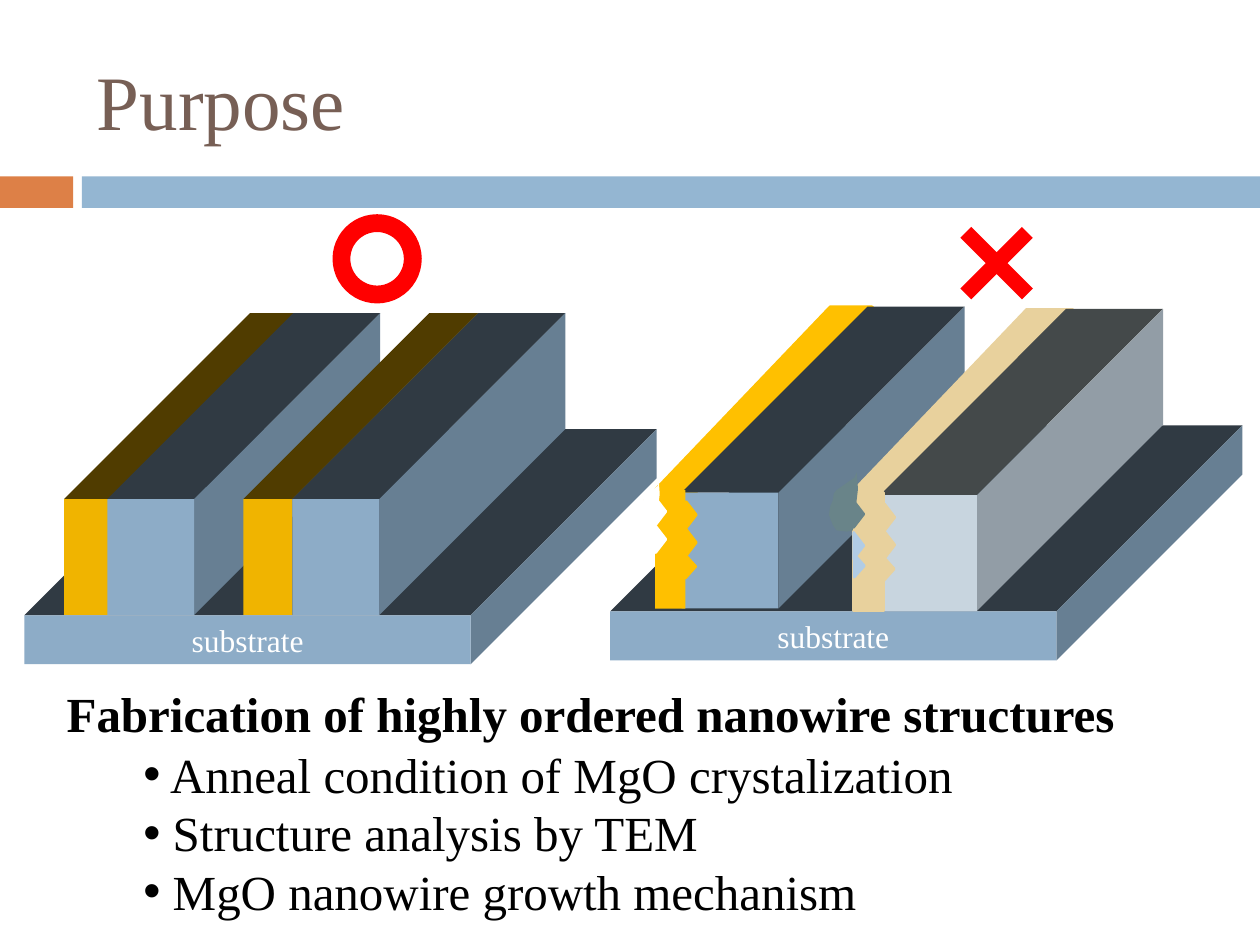
from typing import NamedTuple, Optional

from lxml import etree
from pptx import Presentation
from pptx.dml.color import RGBColor
from pptx.enum import shapes as sh, text as tx
from pptx.oxml import ns
from pptx.util import Pt

FONT = "Times New Roman"
WHITE = RGBColor(0xFF, 0xFF, 0xFF)
BLACK = RGBColor(0, 0, 0)
RED = RGBColor(0xFF, 0, 0)
BROWN = RGBColor(0x77, 0x5F, 0x55)
RUST = RGBColor(0xDD, 0x80, 0x47)
SKY = RGBColor(0x94, 0xB6, 0xD2)
PALE = RGBColor(0xB1, 0xCC, 0xE5)
MOSS = RGBColor(0x69, 0x84, 0x89)
GOLD = RGBColor(0xFF, 0xC0, 0x00)
SAND = RGBColor(0xE8, 0xD1, 0x9D)
DEPTH = 106.3
KIND = sh.MSO_SHAPE


class Box(NamedTuple):
    x: float
    y: float
    w: float
    h: float

    def move(self, dx: float, dy: float) -> "Box":
        return Box(self.x + dx, self.y + dy, self.w, self.h)


class Tone(NamedTuple):
    front: RGBColor
    top: RGBColor
    side: Optional[RGBColor]


class Spike(NamedTuple):
    x: float
    y: float
    size: float
    color: RGBColor


class Wire(NamedTuple):
    dx: float
    dy: float
    film: RGBColor
    edge: Optional[RGBColor]
    tone: Tone
    nicks: tuple


STEEL = Tone(RGBColor(0x8D, 0xAC, 0xC7), RGBColor(0x30, 0x3A, 0x43),
             RGBColor(0x67, 0x7F, 0x93))
FADED = Tone(RGBColor(0xC8, 0xD5, 0xDF), RGBColor(0x44, 0x49, 0x4A),
             RGBColor(0x92, 0x9D, 0xA6))
AMBER = Tone(RGBColor(0xF0, 0xB4, 0x00), RGBColor(0x50, 0x3C, 0x00), None)

BASES = [Box(14, 351.6, 255, 28), Box(348.7, 349.4, 255, 28)]
BARS = [
    (Box(36.7, 285.2, 28, 66.2), AMBER),
    (Box(61.3, 285.2, 49.7, 66.2), STEEL),
    (Box(139, 285.2, 28.1, 66.2), AMBER),
    (Box(167.1, 285.2, 49.7, 66.2), STEEL),
]
TEETH = [(391.3, 309.6, 15.1), (391, 323.3, 13), (391.3, 293.8, 15.1)]
WIRES = [
    Wire(0, 0, GOLD, None, STEEL, (
        Spike(377.6, 308.2, 15.1, WHITE), Spike(377.6, 292.3, 15.1, WHITE))),
    Wire(113.4, 1.4, SAND, SAND, FADED, (
        Spike(490.7, 311.8, 15.1, PALE), Spike(491, 323.3, 13, PALE),
        Spike(490.7, 293.8, 15.1, MOSS))),
]
BLOB = [(.96, 0), (1, .28), (.95, .5), (.88, .68), (.83, .98), (.63, 1),
        (.29, .98), (.17, .89), (.04, .72), (.08, .58), (.17, .47),
        (.2, .36), (.29, .3), (.71, .15), (.88, .09)]
BLOBS = [(Box(365.8, 275.8, 11.2, 23), WHITE),
         (Box(473, 270, 17.3, 33.8), MOSS)]
GOALS = ["Anneal condition of MgO crystalization",
         "Structure analysis by TEM",
         "MgO nanowire growth mechanism"]


def paint(item, fill: RGBColor, edge: Optional[RGBColor] = None) -> None:
    item.shadow.inherit = False
    item.fill.solid()
    item.fill.fore_color.rgb = fill
    if edge is None:
        item.line.fill.background()
    else:
        item.line.color.rgb = edge
        item.line.width = Pt(1.5)


def shape(slide, kind, box: Box, fill: RGBColor,
          edge: Optional[RGBColor] = None, turn: float = 0):
    item = slide.shapes.add_shape(kind, *map(Pt, box))
    item.rotation = turn
    paint(item, fill, edge)
    return item


def shell(slide, dots: list, fill: RGBColor) -> None:
    dots = [(Pt(x), Pt(y)) for x, y in dots]
    pen = slide.shapes.build_freeform(*dots[0])
    pen.add_line_segments(dots[1:], close=True)
    paint(pen.convert_to_shape(), fill)


def prism(slide, box: Box, tone: Tone):
    x, y, w, h = box
    far, up = x + w, y - DEPTH
    shell(slide, [(x, y), (x + DEPTH, up), (far + DEPTH, up), (far, y)],
          tone.top)
    if tone.side is not None:
        shell(slide, [(far, y), (far + DEPTH, up), (far + DEPTH, up + h),
                      (far, y + h)], tone.side)
    return shape(slide, KIND.RECTANGLE, box, tone.front)


def spike(slide, tip: Spike) -> None:
    box = Box(tip.x - tip.size / 2, tip.y - 2.9, tip.size, 5.8)
    shape(slide, KIND.ISOSCELES_TRIANGLE, box, tip.color, tip.color, 90)


def rough(slide, wire: Wire) -> None:
    dx, dy = wire.dx, wire.dy
    shape(slide, KIND.RECTANGLE, Box(424.1, 145.4, 19.4, 170.6).move(dx, dy),
          wire.film, wire.edge, 43.7)
    prism(slide, Box(389.5, 281.5, 55.4, 66.2).move(dx, dy), wire.tone)
    for x, y, size in TEETH:
        spike(slide, Spike(x + dx, y + dy, size, WHITE))
    shape(slide, KIND.RECTANGLE, Box(374.4, 280.1, 17.3, 67.7).move(dx, dy),
          wire.film, wire.edge)
    for x, y, size in TEETH:
        spike(slide, Spike(x + dx + 3.7, y + dy + .4, size, wire.film))
    shape(slide, KIND.RECTANGLE, Box(468, 157.3, 73.4, 17.3).move(dx, dy),
          WHITE)
    for tip in wire.nicks:
        spike(slide, tip)


def write(para, words: str, size: float, color: RGBColor,
          bold: bool = False) -> None:
    run = para.add_run()
    run.text = words
    run.font.name = FONT
    run.font.size = Pt(size)
    run.font.bold = bold
    run.font.color.rgb = color


def frame(slide, box: Box, wrap: bool = False):
    body = slide.shapes.add_textbox(*map(Pt, box)).text_frame
    body.word_wrap = wrap
    return body


def bullet(para) -> None:
    props = para._p.get_or_add_pPr()
    font = etree.SubElement(props, ns.qn("a:buFont"))
    font.set("typeface", "Arial")
    mark = etree.SubElement(props, ns.qn("a:buChar"))
    mark.set("char", "•")


def main() -> None:
    deck = Presentation()
    deck.slide_width, deck.slide_height = Pt(720), Pt(540)
    slide = deck.slides.add_slide(deck.slide_layouts[6])

    shape(slide, KIND.RECTANGLE, Box(0, 100.8, 41.8, 18), RUST)
    shape(slide, KIND.RECTANGLE, Box(46.8, 100.8, 673.2, 18), SKY)
    title = frame(slide, Box(48.2, 18, 642.2, 77.8), True)
    title.vertical_anchor = tx.MSO_ANCHOR.MIDDLE
    write(title.paragraphs[0], "Purpose", 44, BROWN)

    for base in BASES:
        body = prism(slide, base, STEEL).text_frame
        body.vertical_anchor = tx.MSO_ANCHOR.MIDDLE
        para = body.paragraphs[0]
        para.alignment = tx.PP_ALIGN.CENTER
        write(para, "substrate", 18, WHITE)
    for wire in WIRES:
        rough(slide, wire)
    for box, tone in BARS:
        prism(slide, box, tone)
    for box, color in BLOBS:
        shell(slide, [(box.x + u * box.w, box.y + v * box.h)
                      for u, v in BLOB], color)

    goals = frame(slide, Box(74.9, 421.9, 483.1, 108.7))
    for i, goal in enumerate(GOALS):
        para = goals.add_paragraph() if i else goals.paragraphs[0]
        para.line_spacing = Pt(33.5)
        bullet(para)
        write(para, " " + goal, 28, BLACK)
    head = frame(slide, Box(31, 387.4, 619.9, 41)).paragraphs[0]
    head.line_spacing = Pt(33.5)
    write(head, "Fabrication of highly ordered nanowire structures", 28,
          BLACK, True)

    ring = shape(slide, KIND.DONUT, Box(190, 122.4, 51, 51), RED)
    ring.adjustments[0] = .2
    cross = shape(slide, KIND.MATH_MULTIPLY, Box(535.7, 116.6, 67.7, 67.7), RED)
    cross.adjustments[0] = .13
    deck.save("out.pptx")


if __name__ == "__main__":
    main()
